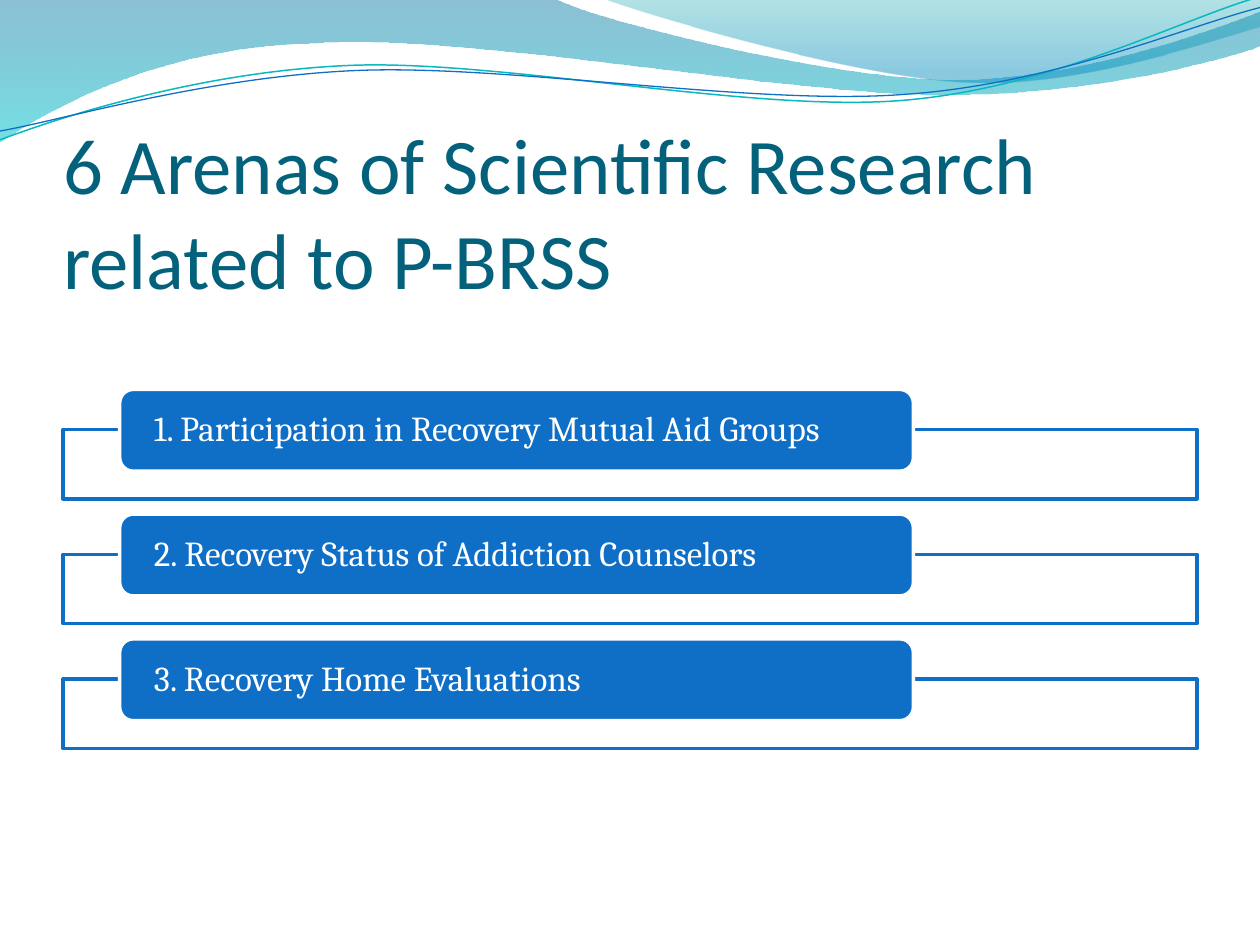
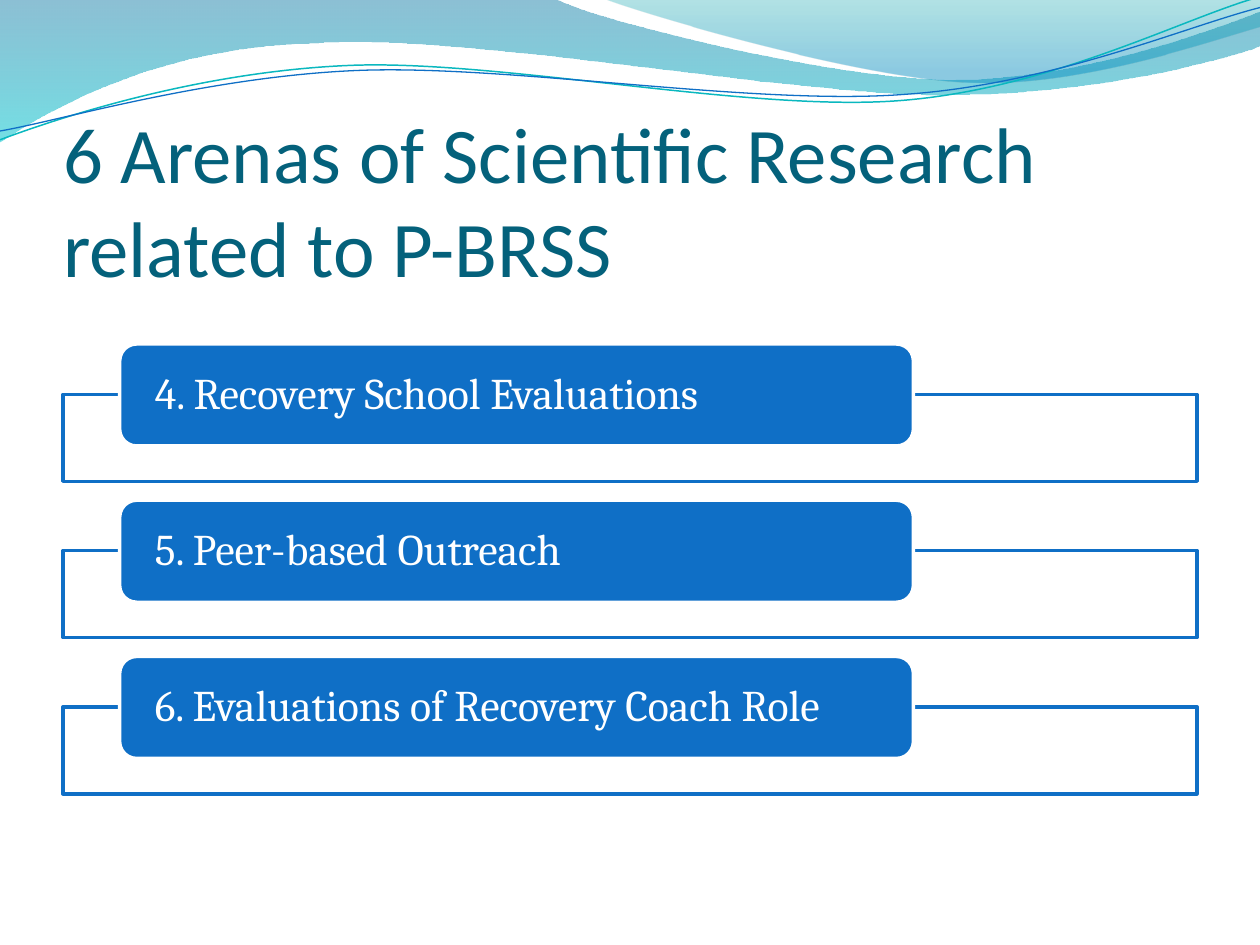
"""Build two slides that list six research arenas under a wave banner."""
import pptx
import pptx.dml.color
import pptx.enum.shapes
import pptx.enum.text
import pptx.oxml
import pptx.oxml.ns
import pptx.util

Inches = pptx.util.Inches
Pt = pptx.util.Pt
qn = pptx.oxml.ns.qn

BLUE, TEAL, WHITE, TITLE_COLOR = "0F6FC6", "0AB8BF", "FFFFFF", "04617B"
TITLE = "6 Arenas of Scientific Research related to P-BRSS"

BANDS = [
    ([(0, 0), (4.4, -0.01),
      ((4.76, 0.17), (6.64, 0.63), (7.58, 0.63)),
      ((8.53, 0.63), (9.58, 0.26), (10, 0.09)),
      (10.01, 0.36),
      ((9.83, 0.44), (8.7, 0.76), (7.46, 0.75)),
      ((6.22, 0.75), (3.82, 0.28), (2.57, 0.34)),
      ((1.29, 0.36), (0.46, 0.83), (-0.01, 1.13)),
      (0, 0)],
     [(0, "0074A1", 45), (1, "00C6CF", 55)]),
    ([(4.79, -0.01),
      ((5.09, 0.11), (6.82, 0.62), (7.69, 0.65)),
      ((8.56, 0.69), (9.61, 0.32), (10, 0.21)),
      (10, 0), (4.79, -0.01)],
     [(0, "00A1A9", 30), (0.8, "008BBF", 45)]),
]
STRANDS = [
    ([(0, 1.11),
      ((0.48, 0.93), (1.58, 0.57), (2.77, 0.52)),
      ((3.95, 0.47), (5.93, 0.89), (7.13, 0.8)),
      ((8.33, 0.71), (9.38, 0.15), (9.98, -0.02))], TEAL, 0.85),
    ([(0, 1.04),
      ((0.47, 0.96), (1.64, 0.61), (2.83, 0.56)),
      ((4.03, 0.51), (5.97, 0.84), (7.17, 0.75)),
      ((8.36, 0.67), (9.41, 0.21), (10, 0.06))], BLUE, 0.75),
]
SLIDES = [
    {"title_height": 1.65, "top": 3.09, "pitch": 0.99, "size": 20,
     "heights": {"bar": 0.65, "drop": 0.32, "frame": 0.55},
     "arenas": ["1. Participation in Recovery Mutual Aid Groups",
                "2. Recovery Status of Addiction Counselors",
                "3. Recovery Home Evaluations"]},
    {"title_height": 1.56, "top": 2.73, "pitch": 1.24, "size": 25,
     "heights": {"bar": 0.81, "drop": 0.4, "frame": 0.69},
     "arenas": ["4. Recovery School Evaluations",
                "5. Peer-based Outreach",
                "6. Evaluations of Recovery Coach Role"]},
]


def color(value):
    return pptx.dml.color.RGBColor.from_string(value)


def apply(target, values):
    for name, value in values.items():
        setattr(target, name, value)


def set_opacity(shape, percents):
    tints = list(shape.element.iter(qn("a:srgbClr")))
    for tint, percent in zip(tints, percents):
        alpha = pptx.oxml.parse_xml(
            f'<a:alpha {pptx.oxml.ns.nsdecls("a")} val="{percent * 1000}"/>')
        tint.append(alpha)


def set_line(shape, value, width):
    shape.line.color.rgb = color(value)
    shape.line.width = Pt(width)


def bend_segments(wave, outline):
    segments = iter(list(wave.element.iter(qn("a:lnTo"))))
    for part in outline[1:]:
        segment = next(segments)
        if len(part) == 3:
            curve = pptx.oxml.parse_xml(
                f'<a:cubicBezTo {pptx.oxml.ns.nsdecls("a")}/>')
            segment.addprevious(curve)
            for old in (segment, next(segments), next(segments)):
                curve.append(old[0])
                old.getparent().remove(old)


def add_wave(page, outline, closed):
    points = []
    for part in outline:
        points.extend(part if len(part) == 3 else [part])
    points = [(Inches(x), Inches(y)) for x, y in points]
    builder = page.shapes.build_freeform(*points[0])
    builder.add_line_segments(points[1:], close=closed)
    wave = builder.convert_to_shape()
    bend_segments(wave, outline)
    wave.shadow.inherit = False
    return wave


def add_band(page, outline, stops):
    band = add_wave(page, outline, True)
    band.fill.gradient()
    band.fill.gradient_angle = 270
    for stop, (position, value, _) in zip(band.fill.gradient_stops, stops):
        stop.position = position
        stop.color.rgb = color(value)
    set_opacity(band, [percent for _, _, percent in stops])
    band.line.fill.background()
    return band


def add_strand(page, outline, value, width):
    strand = add_wave(page, outline, False)
    strand.fill.background()
    set_line(strand, value, width)
    return strand


def move_to_layout(layout, waves):
    for index, wave in enumerate(waves):
        wave.element.nvSpPr.cNvPr.set("id", str(101 + index))
        layout.shapes.element.insert(2 + index, wave.element)


def set_title(page, height):
    title = page.shapes.title
    apply(title, {"left": Inches(0.5), "top": Inches(0.77),
                  "width": Inches(9), "height": Inches(height)})
    frame = title.text_frame
    frame.text = TITLE
    apply(frame, {"margin_left": 0, "margin_right": 0, "margin_bottom": 0,
                  "margin_top": Inches(0.05), "word_wrap": True,
                  "auto_size": pptx.enum.text.MSO_AUTO_SIZE.NONE,
                  "vertical_anchor": pptx.enum.text.MSO_ANCHOR.BOTTOM})
    para = frame.paragraphs[0]
    para.alignment = pptx.enum.text.PP_ALIGN.LEFT
    span = para.runs[0]
    apply(span.font, {"name": "Calibri", "size": Pt(45)})
    span.font.color.rgb = color(TITLE_COLOR)


def add_box(page, kind, place, fill, line):
    box = page.shapes.add_shape(kind, *map(Inches, place))
    box.shadow.inherit = False
    box.fill.solid()
    box.fill.fore_color.rgb = color(fill)
    set_line(box, line, 2)
    return box


def add_arena(page, text, top, size, bar, drop, frame):
    kinds = pptx.enum.shapes.MSO_SHAPE
    outline = add_box(page, kinds.RECTANGLE, (0.5, top + drop, 9, frame),
                      WHITE, BLUE)
    set_opacity(outline, [90])
    label = add_box(page, kinds.ROUNDED_RECTANGLE, (0.95, top, 6.3, bar),
                    BLUE, WHITE)
    label.text_frame.text = text
    apply(label.text_frame, {
        "margin_left": Inches(0.24), "margin_right": Inches(0.24),
        "margin_top": 0, "margin_bottom": 0, "word_wrap": True,
        "vertical_anchor": pptx.enum.text.MSO_ANCHOR.MIDDLE})
    para = label.text_frame.paragraphs[0]
    apply(para, {"alignment": pptx.enum.text.PP_ALIGN.LEFT,
                 "line_spacing": 0.9})
    span = para.runs[0]
    apply(span.font, {"name": "Cambria", "size": Pt(size)})
    span.font.color.rgb = color(WHITE)


def main():
    deck = pptx.Presentation()
    apply(deck, {"slide_width": Inches(10), "slide_height": Inches(7.5)})
    layout = deck.slide_layouts[5]
    for content in SLIDES:
        page = deck.slides.add_slide(layout)
        set_title(page, content["title_height"])
        for index, text in enumerate(content["arenas"]):
            add_arena(page, text, content["top"] + index * content["pitch"],
                      content["size"], **content["heights"])
    waves = [add_band(page, *band) for band in BANDS]
    waves += [add_strand(page, *strand) for strand in STRANDS]
    move_to_layout(layout, waves)
    deck.save("out.pptx")


if __name__ == "__main__":
    main()
